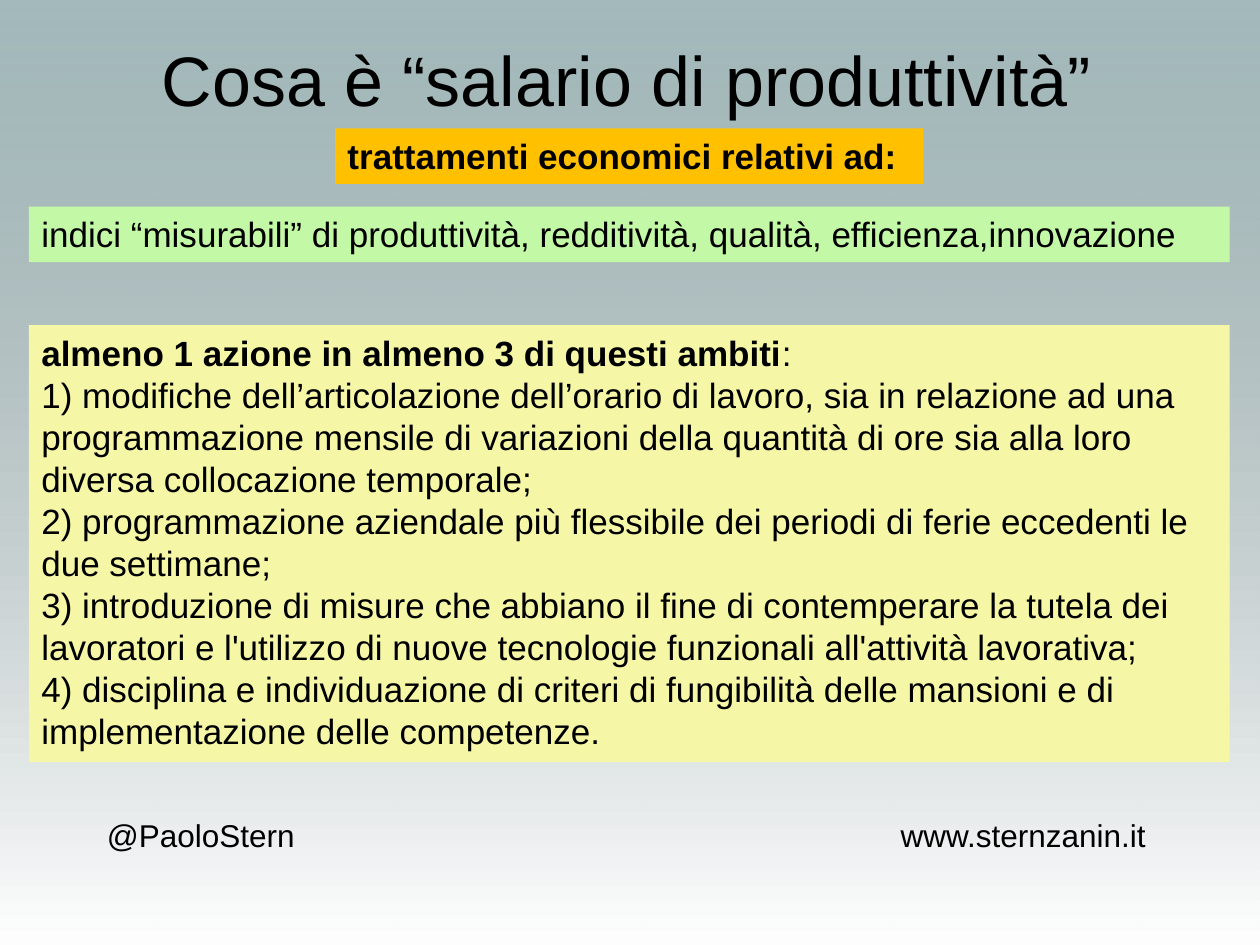
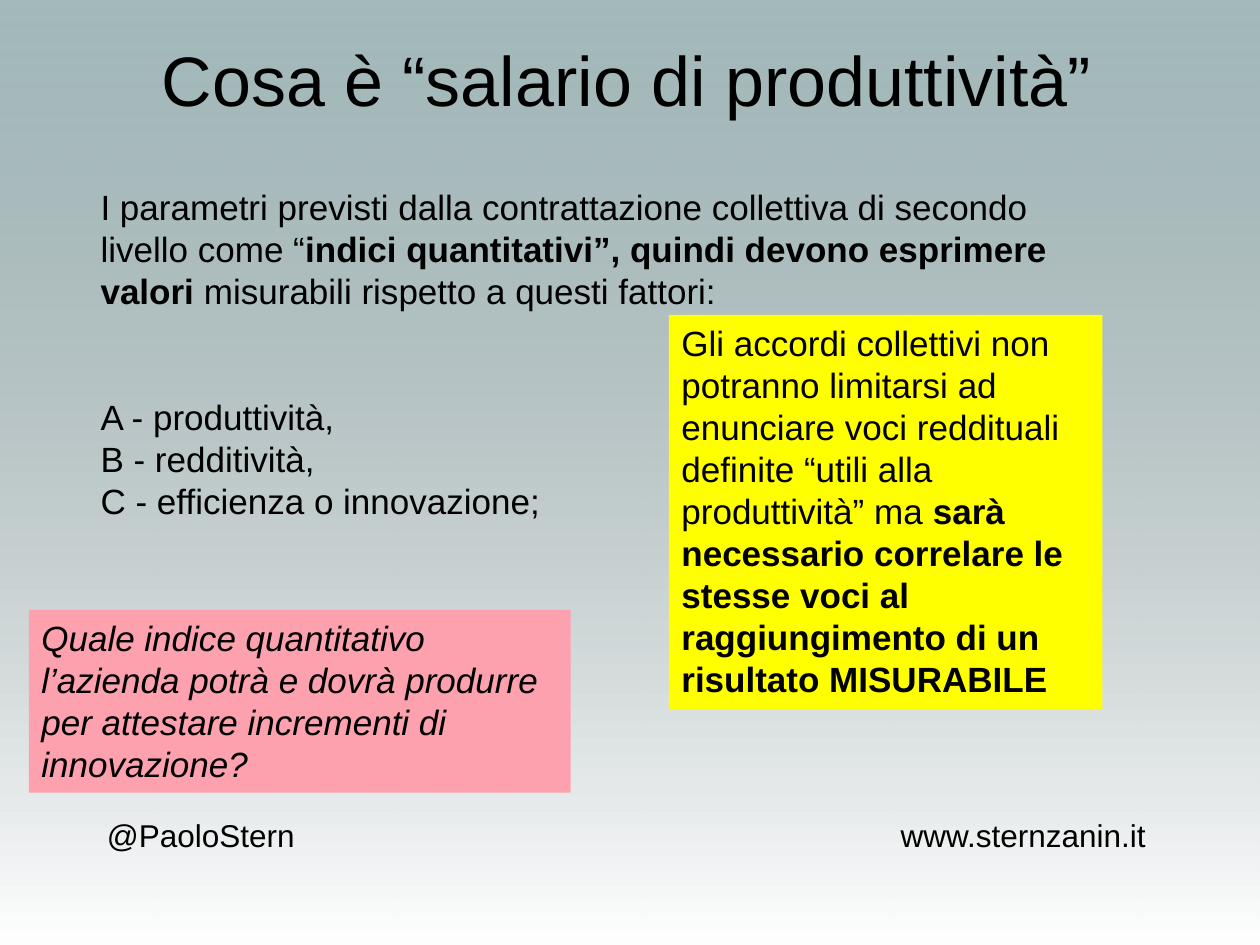
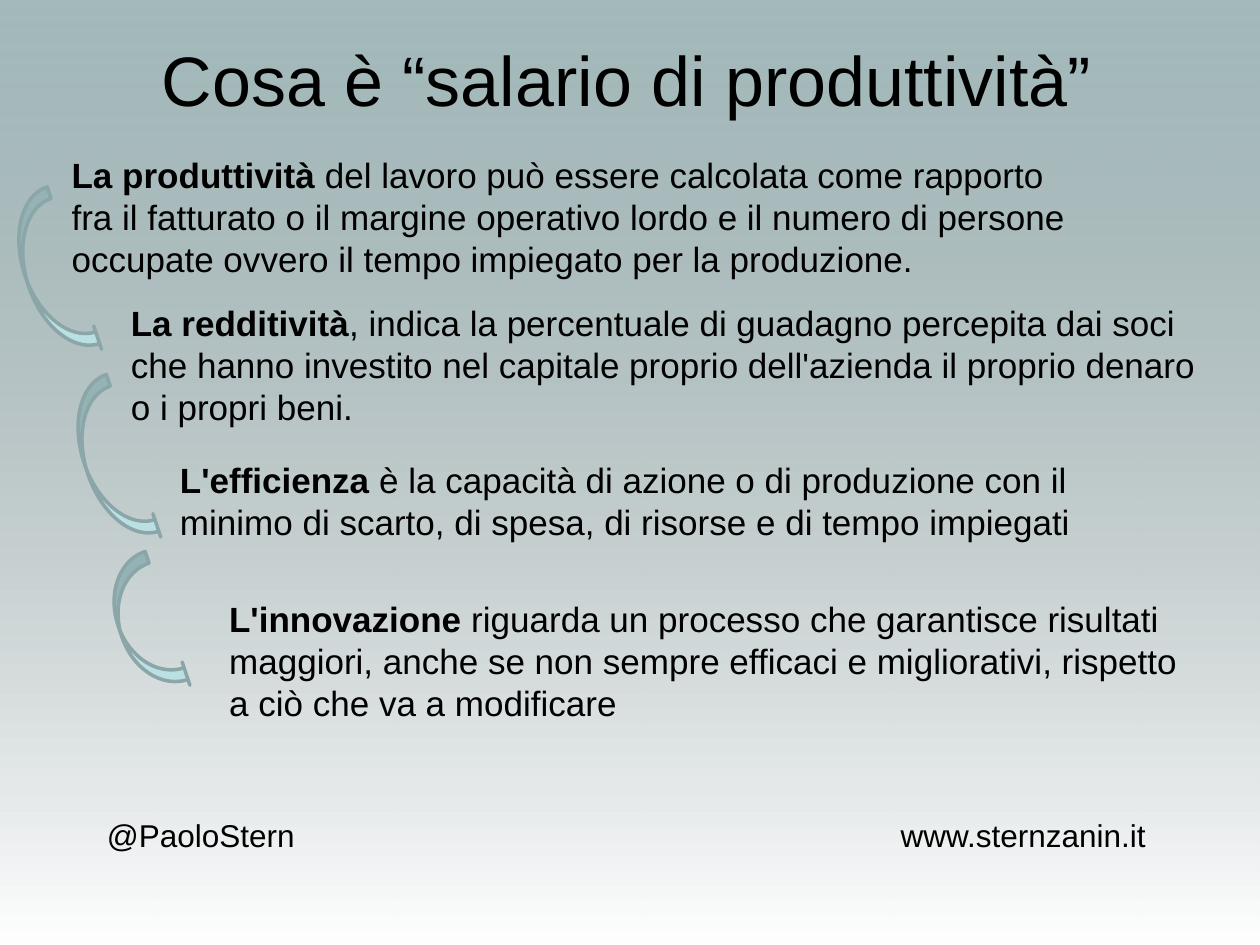
"""Build three slides on the meaning of "salario di produttività"."""
import pptx
import pptx.dml.color
import pptx.enum.shapes
import pptx.enum.text
import pptx.oxml.ns
import pptx.util
from lxml import etree

Inches = pptx.util.Inches
Pt = pptx.util.Pt
RECT = pptx.enum.shapes.MSO_SHAPE.RECTANGLE
ARROW = pptx.enum.shapes.MSO_SHAPE.CURVED_RIGHT_ARROW
FONT = "Arial"
BLACK = "000000"
AQUA = "BBE0E3"


def rgb(value):
    return pptx.dml.color.RGBColor.from_string(value)


def add_text(s, box, paragraphs, fill=None, size=20, italic=False):
    """Add a text box whose **marked** parts are bold."""
    sp = s.shapes.add_textbox(*map(Inches, box))
    if fill:
        sp.fill.solid()
        sp.fill.fore_color.rgb = rgb(fill)
    tf = sp.text_frame
    tf.word_wrap = True
    for i, text in enumerate(paragraphs):
        p = tf.paragraphs[0] if i == 0 else tf.add_paragraph()
        p.font.name, p.font.size, p.font.italic = FONT, Pt(size), italic
        p.font.color.rgb = rgb(BLACK)
        for j, part in enumerate(text.split("**")):
            if part:
                r = p.add_run()
                r.text = part
                r.font.bold = j % 2 == 1
    return sp


prs = pptx.Presentation()
prs.slide_width, prs.slide_height = Inches(10), Inches(7.5)
layout = prs.slide_layouts[5]
fill = prs.slide_master.background.fill
fill.solid()
fill.fore_color.rgb = rgb(AQUA)
for ph in list(layout.placeholders)[1:]:
    ph.element.getparent().remove(ph.element)

slides = [prs.slides.add_slide(layout) for _ in range(3)]
for s in slides:
    title = s.shapes.title
    title.left, title.top, title.width, title.height = map(Inches, (0.47, 0, 9, 1.25))
    tf = title.text_frame
    tf.text = "Cosa è “salario di produttività”"
    tf.vertical_anchor = pptx.enum.text.MSO_ANCHOR.MIDDLE
    p = tf.paragraphs[0]
    p.alignment = pptx.enum.text.PP_ALIGN.CENTER
    p.font.name, p.font.size = FONT, Pt(40)
    p.font.color.rgb = rgb(BLACK)

s = slides[0]
shade = s.shapes.add_shape(RECT, 0, 0, prs.slide_width, prs.slide_height)
shade.shadow.inherit = False
shade.line.fill.background()
shade.fill.gradient()
shade.fill.gradient_angle = 270
for stop, color in zip(shade.fill.gradient_stops, ("808080", "FFFFFF")):
    stop.color.rgb = rgb(color)
first_color = next(shade.element.iter(pptx.oxml.ns.qn("a:srgbClr")))
etree.SubElement(first_color, pptx.oxml.ns.qn("a:alpha"), val="40000")
handle = add_text(s, (0.75, 6.43, 1.81, 0.4), ["@PaoloStern"], size=18)
site = add_text(s, (7.05, 6.43, 2.44, 0.4), ["www.sternzanin.it"], size=18)
for sp in (shade, handle, site):
    layout.shapes.element.append(sp.element)

add_text(s, (0.23, 2.58, 9.53, 3.47), [
    "**almeno 1 azione in almeno 3 di questi ambiti**:",
    "1) modifiche dell’articolazione dell’orario di lavoro, sia in relazione ad una "
    "programmazione mensile di variazioni della quantità di ore sia alla loro "
    "diversa collocazione temporale;",
    "2) programmazione aziendale più flessibile dei periodi di ferie eccedenti le "
    "due settimane;",
    "3) introduzione di misure che abbiano il fine di contemperare la tutela dei "
    "lavoratori e l'utilizzo di nuove tecnologie funzionali all'attività lavorativa;",
    "4) disciplina e individuazione di criteri di fungibilità delle mansioni e di "
    "implementazione delle competenze.",
], "F5F7A7")
add_text(s, (0.23, 1.64, 9.53, 0.44), [
    "indici “misurabili” di produttività, redditività, qualità, efficienza,innovazione",
], "C3F8A6")
add_text(s, (2.66, 1.02, 4.67, 0.44), ["**trattamenti economici relativi ad:**"], "FFC000")

s = slides[1]
sp = add_text(s, (0.7, 1.42, 8.2, 2.8), [
    "I parametri previsti dalla contrattazione collettiva di secondo livello come "
    "“**indici quantitativi”, quindi devono esprimere valori **misurabili rispetto "
    "a questi fattori:",
    "A - produttività,",
    "B - redditività,",
    "C - efficienza o innovazione;",
])
sp.text_frame.paragraphs[1].space_before = Pt(48)
add_text(s, (5.31, 2.5, 3.44, 3.13), [
    "Gli accordi collettivi non potranno limitarsi ad enunciare voci reddituali "
    "definite “utili alla produttività” ma **sarà necessario correlare le stesse "
    "voci al raggiungimento di un risultato MISURABILE**",
], "FFFF00")
add_text(s, (0.23, 4.84, 4.3, 1.45), [
    "Quale indice quantitativo l’azienda potrà e dovrà produrre per attestare "
    "incrementi di innovazione?",
], "FDA1AE", italic=True)

s = slides[2]
definitions = [
    ((0.47, 1.17, 8.28, 1.11),
     "**La produttività **del lavoro può essere calcolata come rapporto fra il "
     "fatturato o il margine operativo lordo e il numero di persone occupate ovvero "
     "il tempo impiegato per la produzione."),
    ((0.94, 2.34, 8.75, 1.11),
     "**La redditività**, indica la percentuale di guadagno percepita dai soci che "
     "hanno investito nel capitale proprio dell'azienda il proprio denaro o i propri "
     "beni."),
    ((1.33, 3.59, 7.5, 0.77),
     "**L'efficienza** è la capacità di azione o di produzione con il minimo di "
     "scarto, di spesa, di risorse e di tempo impiegati"),
    ((1.72, 4.69, 7.89, 1.11),
     "**L'innovazione** riguarda un processo che garantisce risultati maggiori, anche "
     "se non sempre efficaci e migliorativi, rispetto a ciò che va a modificare"),
]
for box, text in definitions:
    add_text(s, box, [text])
for left, top, height in ((0.21, 1.51, 1.36), (0.68, 3, 1.36), (0.95, 4.41, 1.12)):
    sp = s.shapes.add_shape(ARROW, *map(Inches, (left, top, 0.39, height)))
    sp.shadow.inherit = False
    sp.rotation = 341.5
    for i, value in enumerate((0.25, 0.5, 0)):
        sp.adjustments[i] = value
    sp.fill.solid()
    sp.fill.fore_color.rgb = rgb(AQUA)
    sp.line.color.rgb = rgb("8AA6A8")
    sp.line.width = Pt(2)

prs.save("out.pptx")
